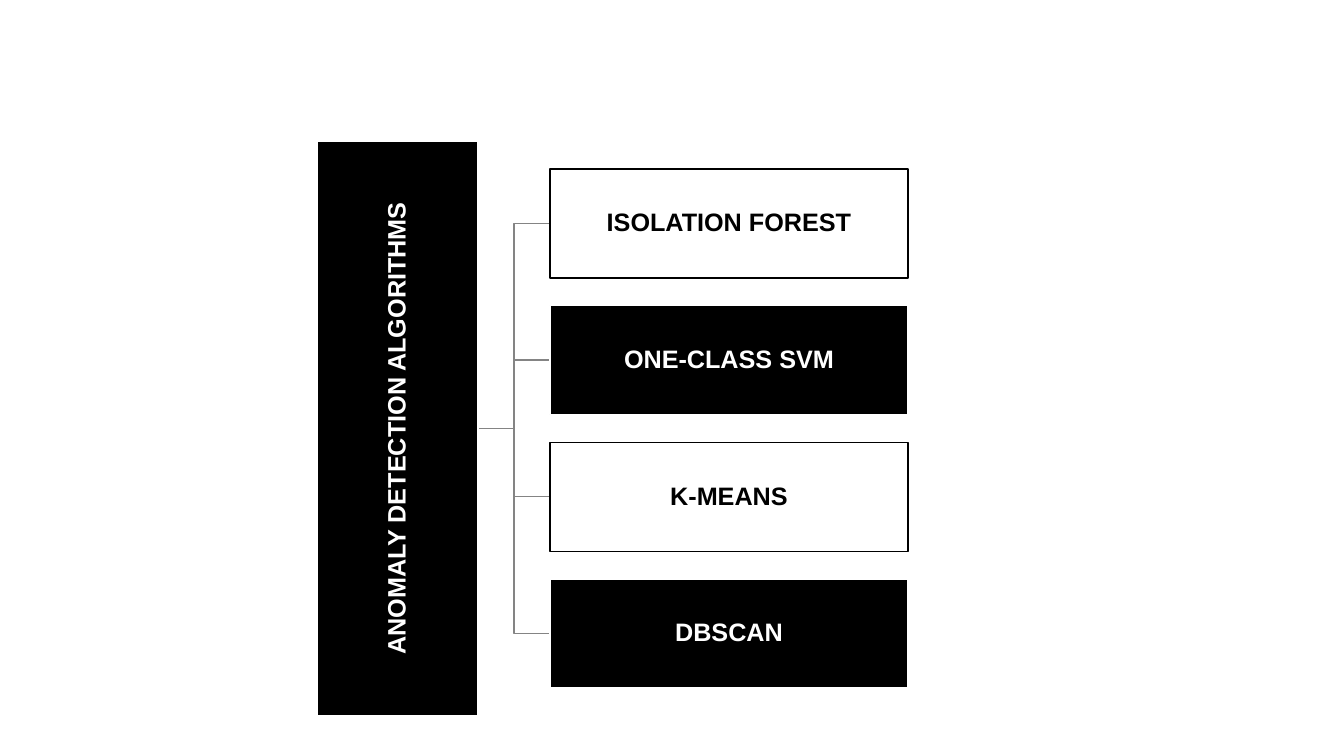
from lxml.etree import SubElement
from pptx import Presentation
from pptx.dml.color import RGBColor
from pptx.enum.shapes import MSO_CONNECTOR, MSO_SHAPE
from pptx.enum.text import MSO_ANCHOR, PP_ALIGN
from pptx.oxml.ns import qn
from pptx.util import Pt

EMU_PER_PX = 914400 / 100.8
BLACK = RGBColor(0x00, 0x00, 0x00)
WHITE = RGBColor(0xFF, 0xFF, 0xFF)
GRAY = RGBColor(0x84, 0x84, 0x84)

ROOT = "ANOMALY DETECTION ALGORITHMS"
ALGORITHMS = ["ISOLATION FOREST", "ONE-CLASS SVM", "K-MEANS", "DBSCAN"]


def px(length):
    """Turn pixels into EMU."""
    return round(length * EMU_PER_PX)


def write(shape, text, color=BLACK, size=18, font="Arial", bold=True):
    """Put one centred line of formatted text into a shape."""
    frame = shape.text_frame
    frame.word_wrap = True
    frame.vertical_anchor = MSO_ANCHOR.MIDDLE
    frame.margin_left = frame.margin_right = px(1)
    frame.margin_top = frame.margin_bottom = px(1)
    paragraph = frame.paragraphs[0]
    paragraph.alignment = PP_ALIGN.CENTER
    paragraph.line_spacing = 0.9
    run = paragraph.add_run()
    run.text = text
    run.font.name = font
    run.font.size = Pt(size)
    run.font.bold = bold
    run.font.color.rgb = color


def add_node(slide, text, left, top, width, height, fill, ink, rotation=0):
    """Draw a labelled rectangle outlined in its text colour."""
    node = slide.shapes.add_shape(
        MSO_SHAPE.RECTANGLE, px(left), px(top), px(width), px(height))
    node.shadow.inherit = False
    node.rotation = rotation
    node.fill.solid()
    node.fill.fore_color.rgb = fill
    node.line.color.rgb = ink
    node.line.width = Pt(1)
    write(node, text, color=ink)


def add_branch(slide, start_x, start_y, end_x, end_y):
    """Draw an elbow line between two points."""
    branch = slide.shapes.add_connector(
        MSO_CONNECTOR.ELBOW, px(start_x), px(start_y), px(end_x), px(end_y))
    branch.line.color.rgb = GRAY
    branch.line.width = Pt(1)
    SubElement(branch._element.spPr, qn("a:effectLst"))


def add_hierarchy(slide, left, top, width, height):
    """Draw the upright root and its column of algorithms inside a box."""
    root_width, gap, inset, node_height = 161, 72, 28, 109
    node_left = left + root_width + gap
    node_width = width - root_width - gap
    pitch = (height - 2 * inset - node_height) / (len(ALGORITHMS) - 1)
    tops = [top + inset + i * pitch for i in range(len(ALGORITHMS))]
    middle = top + height / 2

    for node_top in reversed(tops):
        add_branch(slide, left + root_width, middle,
                   node_left, node_top + node_height / 2)
    add_node(slide, ROOT, left + (root_width - height) / 2,
             middle - root_width / 2, height, root_width,
             BLACK, WHITE, rotation=270)
    for i, (algorithm, node_top) in enumerate(zip(ALGORITHMS, tops)):
        fill, ink = (BLACK, WHITE) if i % 2 else (WHITE, BLACK)
        add_node(slide, algorithm, node_left, node_top,
                 node_width, node_height, fill, ink)


def main():
    """Build and save the slide."""
    deck = Presentation()
    deck.slide_width = px(1344)
    deck.slide_height = px(756)
    slide = deck.slides.add_slide(deck.slide_layouts[6])
    add_hierarchy(slide, 317, 141, 591, 575)
    deck.save("out.pptx")


if __name__ == "__main__":
    main()
